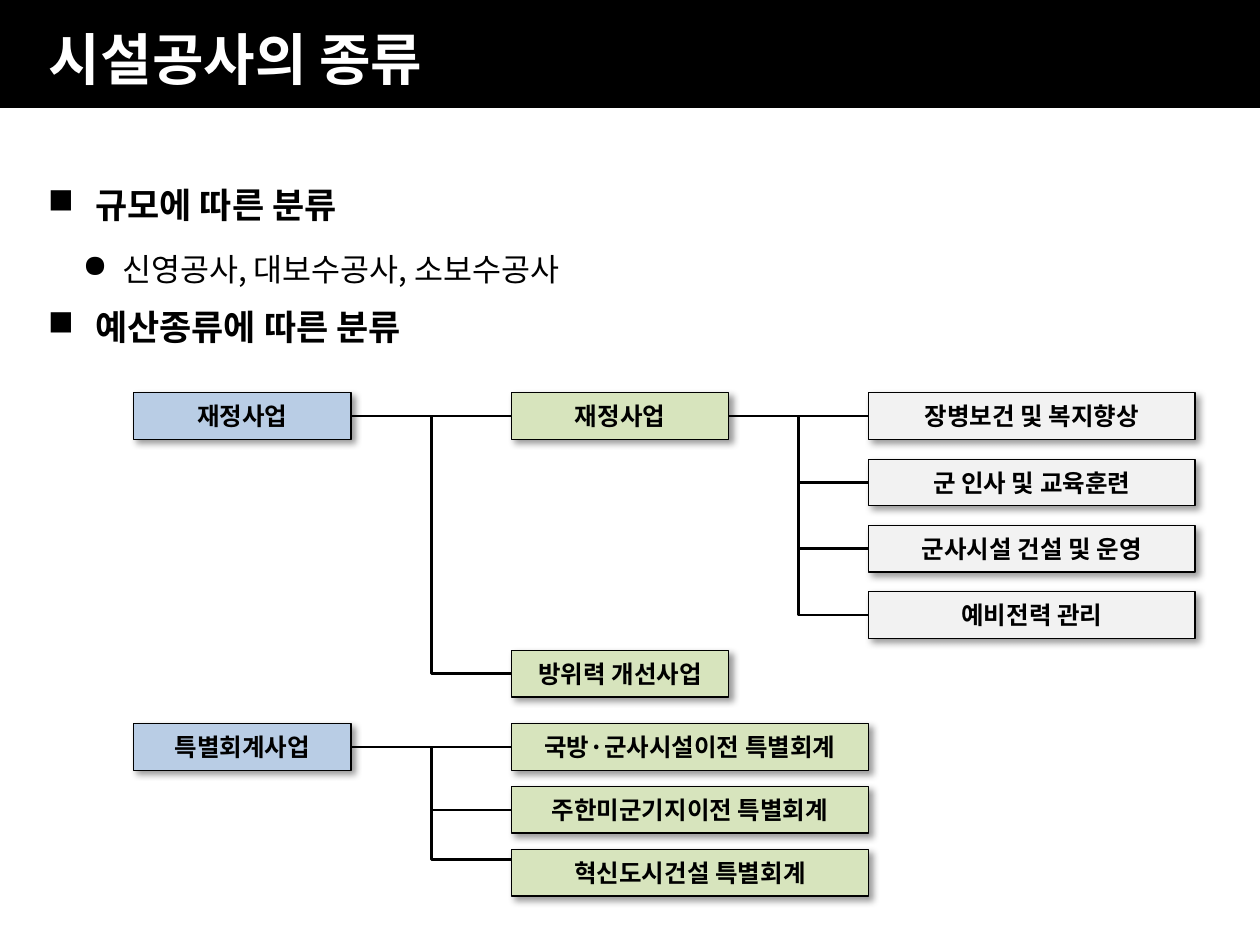
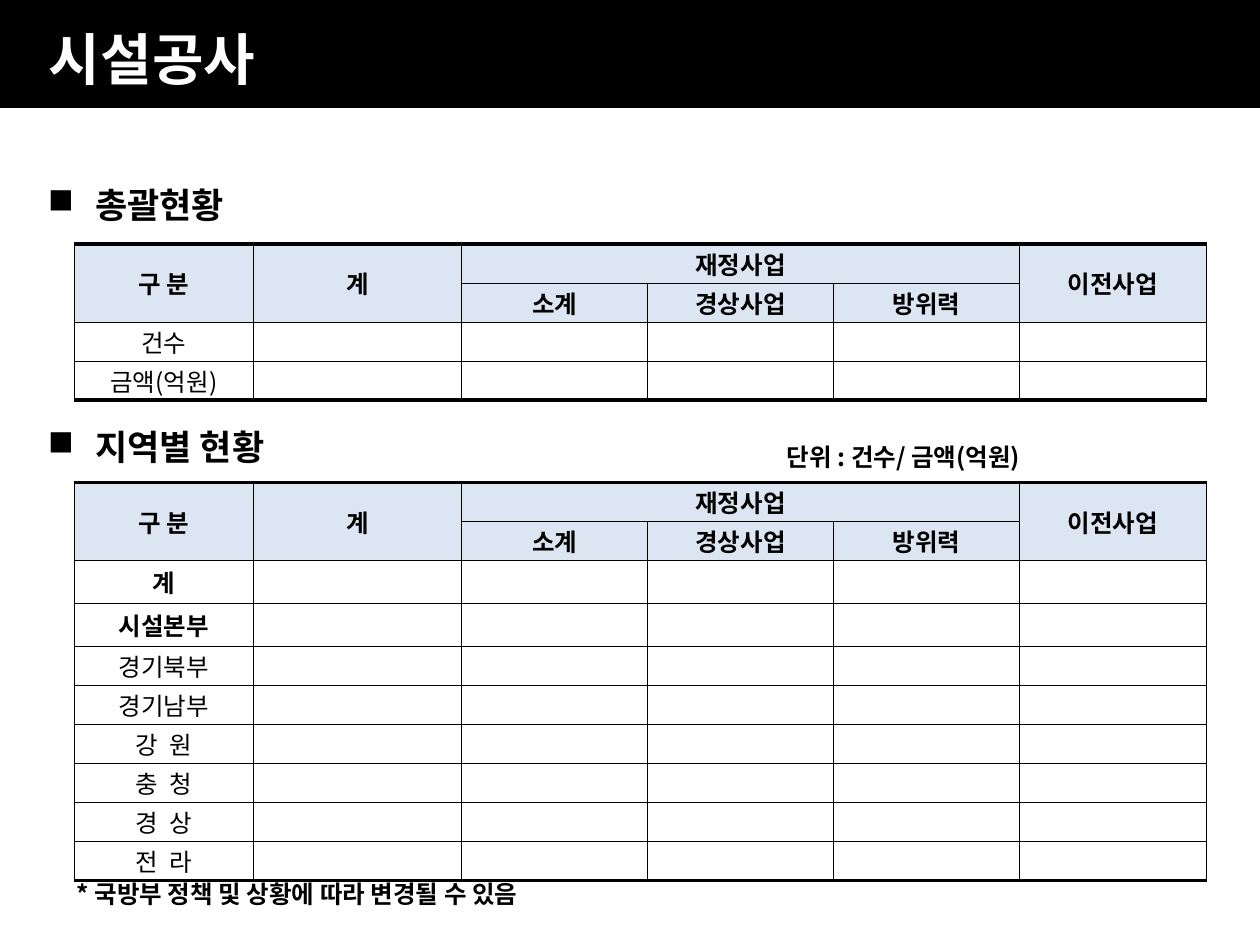
from lxml import etree
from pptx import Presentation
from pptx.dml.color import RGBColor
from pptx.enum import shapes, text
from pptx.oxml import ns, parse_xml
from pptx.util import Pt

FONT = "Noto Sans CJK KR"
BLACK = RGBColor(0x00, 0x00, 0x00)
WHITE = RGBColor(0xFF, 0xFF, 0xFF)
BLUE = RGBColor(0xB9, 0xCD, 0xE5)
GREEN = RGBColor(0xD7, 0xE4, 0xBD)
GRAY = RGBColor(0xF2, 0xF2, 0xF2)
HEADER = RGBColor(0xDC, 0xE6, 0xF2)

BOX_HEIGHT = 26.6
LEFT, CENTER = text.PP_ALIGN.LEFT, text.PP_ALIGN.CENTER
SHADOW = (
    f'<a:outerShdw {ns.nsdecls("a")} blurRad="{Pt(4)}" dist="{Pt(3)}" dir="2700000" '
    'algn="tl" rotWithShape="0"><a:srgbClr val="000000"><a:alpha val="40000"/>'
    "</a:srgbClr></a:outerShdw>"
)


def write(paragraph, words, size=14, bold=True, color=BLACK, align=LEFT, tracking=0):
    """Add words to a paragraph; tracking is the extra letter gap in points."""
    paragraph.alignment = align
    run = paragraph.add_run()
    run.text = words
    font = run.font
    font.name, font.size, font.bold = FONT, Pt(size), bold
    font.color.rgb = color
    properties = run._r.get_or_add_rPr()
    etree.SubElement(properties, ns.qn("a:ea")).set("typeface", FONT)
    if tracking:
        properties.set("spc", str(round(tracking * 100)))


def set_bullet(paragraph, mark, left, hanging):
    properties = paragraph._p.get_or_add_pPr()
    properties.set("marL", str(Pt(left)))
    properties.set("indent", str(-Pt(hanging)))
    etree.SubElement(properties, ns.qn("a:buChar")).set("char", mark)


def set_borders(cell, top, bottom):
    properties = cell._tc.get_or_add_tcPr()
    edges = (("lnL", 0.25), ("lnR", 0.25), ("lnT", top), ("lnB", bottom))
    for position, (edge, width) in enumerate(edges):
        properties.insert(position, parse_xml(
            f'<a:{edge} {ns.nsdecls("a")} w="{Pt(width)}"><a:solidFill>'
            f'<a:srgbClr val="{BLACK}"/></a:solidFill></a:{edge}>'))


class Deck:
    """The shared style and the slide being built."""

    def __init__(self):
        self.presentation = Presentation()
        self.presentation.slide_width = Pt(720)
        self.presentation.slide_height = Pt(540)
        self.slide = None

    def start_slide(self, title):
        self.slide = self.presentation.slides.add_slide(self.presentation.slide_layouts[6])
        self.rectangle(0, 0, 720, 60.5, BLACK, line_width=2)
        frame = self.text_frame(0, 0, 720, 66.2)
        frame.margin_left = Pt(28)
        frame.vertical_anchor = text.MSO_ANCHOR.MIDDLE
        write(frame.paragraphs[0], title, size=32, color=WHITE)

    def text_frame(self, left, top, width, height):
        box = self.slide.shapes.add_textbox(Pt(left), Pt(top), Pt(width), Pt(height))
        box.text_frame.word_wrap = True
        return box.text_frame

    def label(self, left, top, width, words):
        write(self.text_frame(left, top, width, 28).paragraphs[0], words)

    def outline(self, top, height, items):
        """Write (level, words) items as headings and points."""
        frame = self.text_frame(20.2, top, 680, height)
        for index, (level, words) in enumerate(items):
            paragraph = frame.add_paragraph() if index else frame.paragraphs[0]
            paragraph.line_spacing = 1.44
            if level:
                paragraph.level = level
                paragraph.space_before = Pt(4)
                set_bullet(paragraph, "●", 42.5, 22.5)
                write(paragraph, words, size=18, bold=False)
            else:
                set_bullet(paragraph, "■", 27, 27)
                write(paragraph, words, size=20)

    def rectangle(self, left, top, width, height, fill, line_width):
        shape = self.slide.shapes.add_shape(
            shapes.MSO_SHAPE.RECTANGLE, Pt(left), Pt(top), Pt(width), Pt(height))
        shape.shadow.inherit = False
        shape.fill.solid()
        shape.fill.fore_color.rgb = fill
        shape.line.color.rgb = BLACK
        shape.line.width = Pt(line_width)
        return shape

    def box(self, left, top, width, fill, words):
        shape = self.rectangle(left, top, width, BOX_HEIGHT, fill, line_width=0.75)
        shape._element.spPr.find(ns.qn("a:effectLst")).append(parse_xml(SHADOW))
        frame = shape.text_frame
        frame.margin_left = frame.margin_right = Pt(4.3)
        frame.margin_top = frame.margin_bottom = Pt(3.6)
        frame.word_wrap = False
        frame.vertical_anchor = text.MSO_ANCHOR.MIDDLE
        write(frame.paragraphs[0], words, align=CENTER)
        return shape

    def branch(self, parent, child, end_y=None):
        """Join parent to child, or stop on the child's side at end_y."""
        level = parent.top == child.top
        kind = shapes.MSO_CONNECTOR.STRAIGHT if level else shapes.MSO_CONNECTOR.ELBOW
        start_y = parent.top + parent.height // 2
        link = self.slide.shapes.add_connector(
            kind, parent.left + parent.width, start_y, child.left,
            child.top + child.height // 2 if end_y is None else Pt(end_y))
        link.begin_connect(parent, 3)
        if end_y is None:
            link.end_connect(child, 1)
        link.line.color.rgb = BLACK
        link.line.width = Pt(1.5)
        etree.SubElement(link._element.spPr, ns.qn("a:effectLst"))

    def budget_table(self, top, body):
        """Draw the two header rows, then one row per (name, height, bold, tracking)."""
        widths = [102.3, 119] + [106.3] * 4
        heights = [22.3, 22.3] + [height for _, height, _, _ in body]
        table = self.slide.shapes.add_table(
            len(heights), len(widths), Pt(42.5), Pt(top), Pt(sum(widths)), Pt(sum(heights))).table
        table.first_row = table.horz_banding = False
        for column, width in zip(table.columns, widths):
            column.width = Pt(width)
        for row, height in zip(table.rows, heights):
            row.height = Pt(height)

        words = {(0, 0): "구 분", (0, 1): "계", (0, 2): "재정사업", (0, 5): "이전사업",
                 (1, 2): "소계", (1, 3): "경상사업", (1, 4): "방위력"}
        words.update({(row, 0): name for row, (name, *_) in enumerate(body, 2)})
        last = len(heights) - 1
        for row in range(len(heights)):
            _, _, bold, tracking = body[row - 2] if row > 1 else ("", 0, True, 0)
            for column in range(len(widths)):
                cell = table.cell(row, column)
                cell.margin_left = cell.margin_right = Pt(3.6)
                cell.margin_top = cell.margin_bottom = Pt(0.7)
                cell.vertical_anchor = text.MSO_ANCHOR.MIDDLE
                cell.fill.solid()
                cell.fill.fore_color.rgb = WHITE if row > 1 else HEADER
                set_borders(cell, 2.25 if row == 0 else 0.25, 2.25 if row == last else 0.25)
                paragraph = cell.text_frame.paragraphs[0]
                if (row, column) in words:
                    write(paragraph, words[row, column], bold=bold, align=CENTER, tracking=tracking)
                else:
                    etree.SubElement(paragraph._p, ns.qn("a:endParaRPr")).set("sz", "1400")
        for column in (0, 1, 5):
            table.cell(0, column).merge(table.cell(1, column))
        table.cell(0, 2).merge(table.cell(0, 4))


def build_types(deck):
    deck.start_slide("시설공사의 종류")
    deck.outline(91, 400, [
        (0, "규모에 따른 분류"),
        (1, "신영공사, 대보수공사, 소보수공사"),
        (0, "예산종류에 따른 분류"),
    ])
    fund_x, program_x, field_x = 76.4, 292.3, 496.4
    finance_y, special_y = 224.5, 413.6

    finance = deck.box(fund_x, finance_y, 124.2, BLUE, "재정사업")
    operating = deck.box(program_x, finance_y, 124.2, GREEN, "재정사업")
    defense = deck.box(program_x, 371.7, 124.2, GREEN, "방위력 개선사업")
    for program in (operating, defense):
        deck.branch(finance, program)

    fields = ["장병보건 및 복지향상", "군 인사 및 교육훈련", "군사시설 건설 및 운영", "예비전력 관리"]
    for index, name in enumerate(fields):
        deck.branch(operating, deck.box(field_x, finance_y + 37.9 * index, 186.5, GRAY, name))

    special = deck.box(fund_x, special_y, 124.2, BLUE, "특별회계사업")
    accounts = [("국방·군사시설이전 특별회계", None), ("주한미군기지이전 특별회계", None),
                ("혁신도시건설 특별회계", 491.2)]
    for index, (name, end_y) in enumerate(accounts):
        account = deck.box(program_x, special_y + 35.9 * index, 204, GREEN, name)
        deck.branch(special, account, end_y)


def build_status(deck):
    deck.start_slide("시설공사")
    deck.outline(91, 48, [(0, "총괄현황")])
    deck.outline(229.3, 48, [(0, "지역별 현황")])
    deck.label(442.5, 248.8, 200, "단위 : 건수/ 금액(억원)")
    deck.budget_table(139.5, [(name, 22.3, False, 0) for name in ("건수", "금액(억원)")])
    totals = [(name, 24.6, True, 0) for name in ("계", "시설본부")]
    regions = [(name, 22.3, False, 0) for name in ("경기북부", "경기남부")]
    spaced_regions = [(name, 22.3, False, 1.5) for name in ("강 원", "충 청", "경 상", "전 라")]
    deck.budget_table(275.6, totals + regions + spaced_regions)
    deck.label(36.7, 498.5, 310, "* 국방부 정책 및 상황에 따라 변경될 수 있음")


def main():
    deck = Deck()
    build_types(deck)
    build_status(deck)
    deck.presentation.save("out.pptx")


if __name__ == "__main__":
    main()
